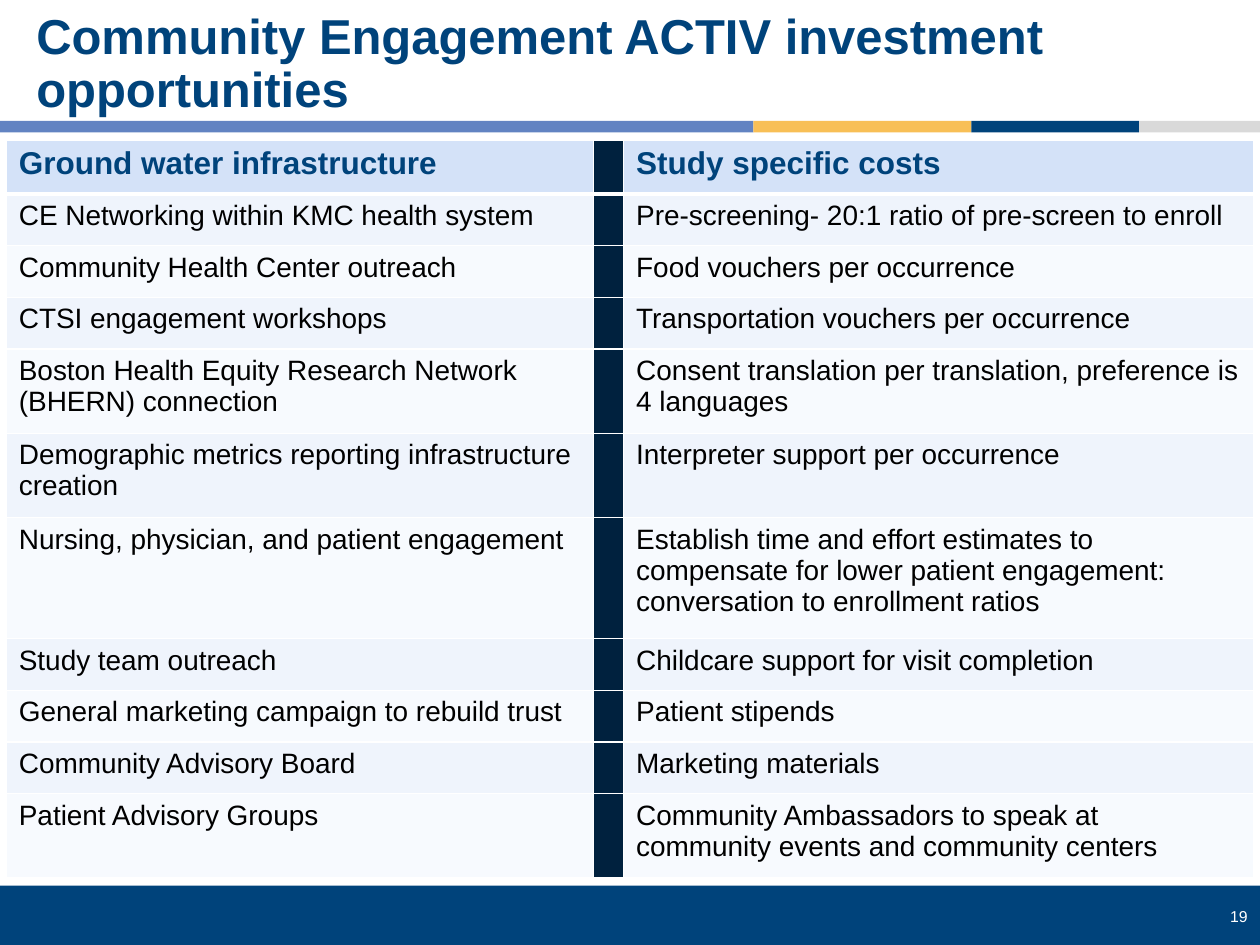
from pptx import Presentation
from pptx.dml.color import RGBColor
from pptx.enum.shapes import MSO_SHAPE as SHAPE
from pptx.enum.text import MSO_ANCHOR as ANCHOR, PP_ALIGN as ALIGN
from pptx.oxml.ns import qn
from pptx.util import Inches, Pt
from lxml.etree import SubElement

WIDTH, HEIGHT = Inches(10), Inches(7.5)
COL, ROW = WIDTH // 1000, HEIGHT // 750
NAVY, DARK, WHITE = "00437B", "00213E", "FFFFFF"
HEAD_FILL, BAND_FILLS = "D4E2F8", ("EFF4FC", "F7FAFE")
STRIPES = [(0, "6283C2"), (598, "F8BF56"), (771, NAVY), (904, "D9D9D9"), (1000, None)]
COLUMN_WIDTHS = (466, 23, 500)
ROW_HEIGHTS = {1: 41, 2: 67, 3: 96}
HEADINGS = ("Ground water infrastructure", "Study specific costs")
ITEMS = [
    (1, "CE Networking within KMC health system", "Pre-screening- 20:1 ratio of pre-screen to enroll"),
    (1, "Community Health Center outreach", "Food vouchers per occurrence"),
    (1, "CTSI engagement workshops", "Transportation vouchers per occurrence"),
    (2, "Boston Health Equity Research Network (BHERN) connection",
     "Consent translation per translation, preference is 4 languages"),
    (2, "Demographic metrics reporting infrastructure creation", "Interpreter support per occurrence"),
    (3, "Nursing, physician, and patient engagement",
     "Establish time and effort estimates to compensate for lower patient engagement: "
     "conversation to enrollment ratios"),
    (1, "Study team outreach", "Childcare support for visit completion"),
    (1, "General marketing campaign to rebuild trust", "Patient stipends"),
    (1, "Community Advisory Board", "Marketing materials"),
    (2, "Patient Advisory Groups", "Community Ambassadors to speak at community events and community centers"),
]


def rgb(value):
    return RGBColor.from_string(value)


def place(box):
    x, y, w, h = box
    return x * COL, y * ROW, w * COL, h * ROW


def write(tf, text, size, color, bold=False, **layout):
    p = tf.paragraphs[0]
    for name, value in layout.items():
        setattr(p, name, value)
    r = p.add_run()
    r.text = text
    for name, value in {"name": "Arial", "size": Pt(size), "bold": bold}.items():
        setattr(r.font, name, value)
    r.font.color.rgb = rgb(color)


def add_label(s, box, anchor, *text, **layout):
    tf = s.shapes.add_textbox(*place(box)).text_frame
    tf.word_wrap = True
    tf.vertical_anchor = anchor
    write(tf, *text, **layout)


def add_block(s, box, color):
    sp = s.shapes.add_shape(SHAPE.RECTANGLE, *place(box))
    sp.shadow.inherit = False
    sp.fill.solid()
    sp.fill.fore_color.rgb = rgb(color)
    sp.line.fill.background()


def add_title(s, box):
    add_label(s, box, ANCHOR.MIDDLE, "Community Engagement ACTIV investment opportunities",
              28, NAVY, True, line_spacing=0.9)


def add_stripes(s, box):
    x, y, w, h = box
    for (start, color), (end, _) in zip(STRIPES, STRIPES[1:]):
        add_block(s, (x + start * w // 1000, y, (end - start) * w // 1000, h), color)


def add_footer(s, box):
    x, y, w, h = box
    add_block(s, box, NAVY)
    add_label(s, (x + w - 69, y + 12, 69, 25), ANCHOR.TOP, "19", 9, WHITE, alignment=ALIGN.RIGHT)


def style_cell(cell, fill, bottom):
    tc_pr = cell._tc.get_or_add_tcPr()
    for side, width in {"L": 1, "R": 1, "T": 1, "B": bottom}.items():
        ln = SubElement(tc_pr, qn(f"a:ln{side}"), w=str(Pt(width)))
        SubElement(SubElement(ln, qn("a:solidFill")), qn("a:srgbClr"), val=WHITE)
    cell.fill.solid()
    cell.fill.fore_color.rgb = rgb(fill)


def add_costs_table(s, box):
    rows = [(43, HEAD_FILL, 3, HEADINGS, (18, NAVY, True))]
    for i, (lines, *texts) in enumerate(ITEMS):
        rows.append((ROW_HEIGHTS[lines], BAND_FILLS[i % 2], 1, texts, (16, "000000")))
    table = s.shapes.add_table(len(rows), len(COLUMN_WIDTHS), *place(box)).table
    for column, width in zip(table.columns, COLUMN_WIDTHS):
        column.width = width * COL
    for i, (height, fill, bottom, (left, right), font) in enumerate(rows):
        table.rows[i].height = height * ROW
        for j, text in enumerate((left, None, right)):
            cell = table.cell(i, j)
            style_cell(cell, fill if text else DARK, bottom)
            if text:
                write(cell.text_frame, text, *font)


def main():
    prs = Presentation()
    prs.slide_width, prs.slide_height = WIDTH, HEIGHT
    s = prs.slides.add_slide(prs.slide_layouts[6])
    add_footer(s, (0, 703, 1000, 47))
    add_stripes(s, (0, 96, 1000, 9))
    add_title(s, (19, 17, 957, 69))
    add_costs_table(s, (5, 111, 990, 584))
    prs.save("out.pptx")


if __name__ == "__main__":
    main()
